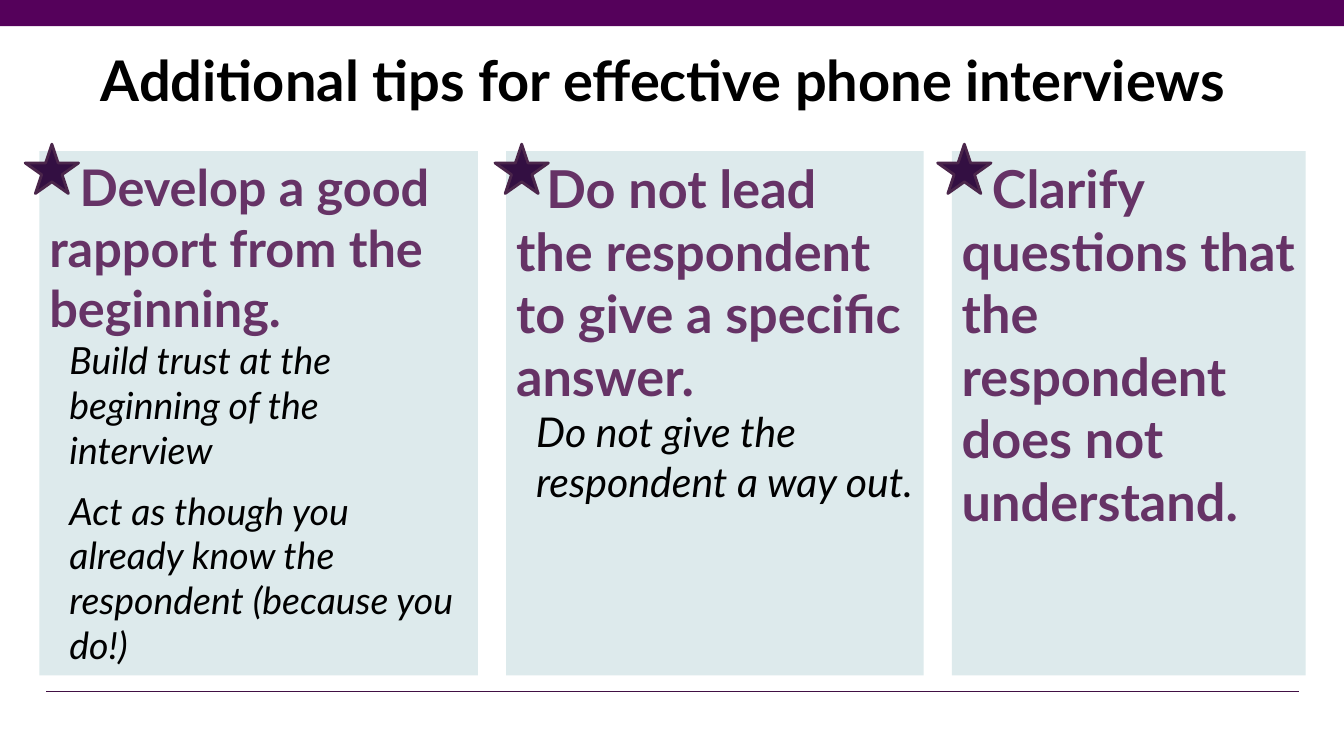
"""Build the slide with tips for phone interviews."""
from dataclasses import dataclass

from lxml.etree import SubElement
from pptx import Presentation
from pptx.dml.color import RGBColor
from pptx.enum.shapes import MSO_CONNECTOR as Connector, MSO_SHAPE as Shape
from pptx.enum.text import MSO_ANCHOR as Anchor, MSO_AUTO_SIZE as AutoSize, PP_ALIGN as Align
from pptx.oxml.ns import qn
from pptx.util import Inches, Pt

TITLE = "Additional tips for effective phone interviews"
CARDS = [
    dict(left=0.39, width=4.35, star=0.25, tip_size=36, detail_size=26.7,
         tip="Develop a good rapport from the beginning.",
         details=["Build trust at the beginning of the interview",
                  "Act as though you already know the respondent (because you do!)"]),
    dict(left=5.02, width=4.14, star=4.91, tip_size=37.3, detail_size=29.3,
         tip="Do not lead\vthe respondent to give a specific answer.",
         details=["Do not give the respondent a way out."]),
    dict(left=9.44, width=3.51, star=9.3, tip_size=37.3, detail_size=29.3,
         tip="Clarify questions that the respondent does not understand.",
         details=[]),
]
WIDTH, HEIGHT = 13.33, 7.5
CARD_TOP, CARD_HEIGHT = 1.5, 5.2
STAR_TOP, STAR_WIDTH, STAR_HEIGHT = 1.43, 0.53, 0.49
TIP_INDENT, DETAIL_INDENT = 0.3, 0.2


@dataclass(frozen=True)
class Theme:
    font: str = "Lato"
    title_size: float = 40
    detail_gap: float = 11.2
    text: str = "000000"
    tip: str = "663366"
    bar: str = "55015B"
    card: str = "DDEAEC"
    star: str = "330F42"
    star_line: str = "4B264B"
    rule: str = "411044"


THEME = Theme()


def color(code):
    return RGBColor.from_string(code)


def write(para, text, size, ink, bold=False, italic=False, align=Align.LEFT,
          left=0, first=0, before=0):
    para.text = text
    para.alignment = align
    para.space_before = Pt(before)
    para.space_after = Pt(0)
    para.line_spacing = 1.0
    props = para._p.get_or_add_pPr()
    props.set("marL", str(Inches(left)))
    props.set("indent", str(Inches(first)))
    for span in para.runs:
        font = span.font
        font.name, font.size = THEME.font, Pt(size)
        font.bold, font.italic = bold, italic
        font.color.rgb = color(ink)


def prepare(frame):
    frame.word_wrap = True
    frame.auto_size = AutoSize.NONE
    frame.vertical_anchor = Anchor.TOP
    frame.margin_left = frame.margin_right = Inches(0.1)
    frame.margin_top = frame.margin_bottom = Inches(0.05)


def add_block(shapes, kind, left, top, width, height, fill, line=None):
    box = shapes.add_shape(kind, *map(Inches, (left, top, width, height)))
    box.shadow.inherit = False
    box.fill.solid()
    box.fill.fore_color.rgb = color(fill)
    if line:
        box.line.color.rgb = color(line)
        box.line.width = Pt(2)
    else:
        box.line.fill.background()
    return box


def add_rule(page):
    rule = page.shapes.add_connector(
        Connector.STRAIGHT, *map(Inches, (0.46, 6.86, 12.88, 6.86)))
    rule.line.color.rgb = color(THEME.rule)
    rule.line.width = Pt(1.25)
    SubElement(rule._element.spPr, qn("a:effectLst"))


def add_title(page):
    title = page.shapes.title
    title.left, title.top, title.width, title.height = map(Inches, (0.39, 0.4, 12.37, 1.65))
    prepare(title.text_frame)
    write(title.text_frame.paragraphs[0], TITLE, size=THEME.title_size,
          ink=THEME.text, bold=True, align=Align.CENTER)


def add_card(page, card):
    group = page.shapes.add_group_shape()
    box = add_block(group.shapes, Shape.RECTANGLE, card["left"], CARD_TOP,
                    card["width"], CARD_HEIGHT, THEME.card)
    frame = box.text_frame
    prepare(frame)
    write(frame.paragraphs[0], card["tip"], size=card["tip_size"],
          ink=THEME.tip, bold=True, first=TIP_INDENT)
    for index, detail in enumerate(card["details"]):
        write(frame.add_paragraph(), detail, size=card["detail_size"],
              ink=THEME.text, italic=True, left=DETAIL_INDENT,
              before=THEME.detail_gap if index else 0)
    add_block(group.shapes, Shape.STAR_5_POINT, card["star"], STAR_TOP,
              STAR_WIDTH, STAR_HEIGHT, THEME.star, THEME.star_line)


def main():
    deck = Presentation()
    deck.slide_width, deck.slide_height = Inches(WIDTH), Inches(HEIGHT)
    page = deck.slides.add_slide(deck.slide_layouts[5])
    add_rule(page)
    add_title(page)
    add_block(page.shapes, Shape.RECTANGLE, 0, 0, WIDTH, 0.26, THEME.bar)
    for card in CARDS:
        add_card(page, card)
    deck.save("out.pptx")


if __name__ == "__main__":
    main()
